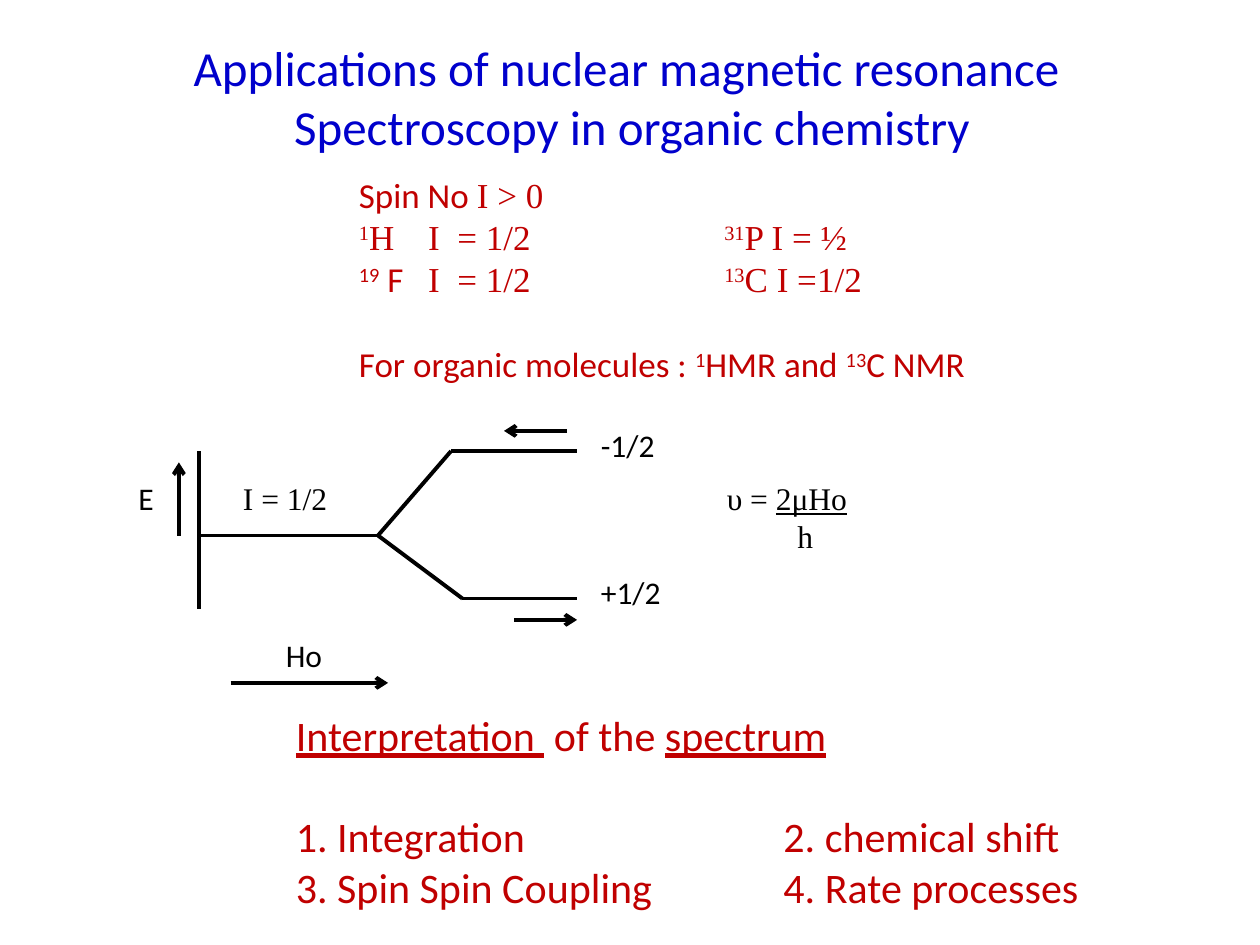
import pptx
import pptx.dml.color
import pptx.enum.shapes
import pptx.enum.text
import pptx.util
from lxml import etree
from pptx.oxml.ns import qn

Inches = pptx.util.Inches
Pt = pptx.util.Pt

BLUE, RED, BLACK = "0000CC", "C00000", "000000"
SANS, SERIF = "Calibri", "Times New Roman"


def serif(text):
    return text, {"font": SERIF}


def raised(text, font=SERIF):
    return text, {"font": font, "superscript": True}


def underlined(text, font=SANS):
    return text, {"font": font, "underline": True}


# A paragraph is a list of runs; a run is plain text or (text, format).
title = [
    ["Applications of nuclear magnetic resonance "],
    ["Spectroscopy in organic chemistry"],
]
spin_numbers = [
    ["Spin No ", serif("I > 0")],
    [raised("1"), serif("H\tI  = 1/2\t"), raised("31"), serif("P I = ½")],
    [raised("19", SANS), " F\t", serif("I  = 1/2\t"), raised("13"), serif("C I =1/2")],
    ["For organic molecules : ", raised("1", SANS), "HMR and ",
     raised("13", SANS), "C NMR"],
]
formula = [
    [serif("υ = "), underlined("2μHo", SERIF)],
    [serif("\th")],
]
interpretation = [
    [underlined("Interpretation "), " of the ", underlined("spectrum")],
    ["1. Integration\t2. chemical shift"],
    ["3. Spin Spin Coupling\t4. Rate processes"],
]

# text, left, top, width
diagram_labels = [
    ("E", 1, 3.75, 0.32),
    (serif("I = 1/2"), 1.83, 3.75, 0.88),
    ("-1/2", 4.67, 3.33, 0.63),
    ("+1/2", 4.67, 4.5, 0.68),
    ("Ho", 2.17, 5, 0.49),
]

split = (3, 4.25)
upper, lower = (3.58, 3.58), (3.67, 4.75)
level_end = 4.58
levels = [
    ((1.58, 3.58), (1.58, 4.83)),
    ((1.58, 4.25), split),
    (split, upper),
    (split, lower),
    (upper, (level_end, upper[1])),
    (lower, (level_end, lower[1])),
]
arrows = [
    ((1.42, 4.25), (1.42, 3.67)),
    ((4.5, 3.42), (4, 3.42)),
    ((4.08, 4.92), (level_end, 4.92)),
    ((1.83, 5.42), (3.08, 5.42)),
]


def rgb(value):
    return pptx.dml.color.RGBColor.from_string(value)


def add_tabs(paragraph, stops):
    tab_list = etree.SubElement(paragraph._p.get_or_add_pPr(), qn("a:tabLst"))
    for stop in stops:
        etree.SubElement(tab_list, qn("a:tab"), pos=str(Inches(stop)), algn="l")


def add_text(slide, paragraphs, box, *, size, color=BLACK, centered=False,
             wrap=True, tabs=(), gap_before=None):
    """Add a text box; gap_before is the paragraph index set off by one line."""
    frame = slide.shapes.add_textbox(*map(Inches, box)).text_frame
    frame.word_wrap = wrap
    for index, runs in enumerate(paragraphs):
        paragraph = frame.paragraphs[0] if index == 0 else frame.add_paragraph()
        if centered:
            paragraph.alignment = pptx.enum.text.PP_ALIGN.CENTER
        if index == gap_before:
            paragraph.space_before = Pt(size * 1.22)
        if tabs:
            add_tabs(paragraph, tabs)
        for item in runs:
            text, style = (item, {}) if isinstance(item, str) else item
            run = paragraph.add_run()
            run.text = text
            run.font.name = style.get("font", SANS)
            run.font.size = Pt(size)
            run.font.color.rgb = rgb(color)
            if style.get("underline"):
                run.font.underline = True
            if style.get("superscript"):
                run._r.get_or_add_rPr().set("baseline", "30000")


def add_line(slide, start, end, arrow=False):
    line = slide.shapes.add_connector(
        pptx.enum.shapes.MSO_CONNECTOR.STRAIGHT, *map(Inches, start + end))
    line.line.color.rgb = rgb(BLACK)
    line.line.width = Pt(2.25)
    if arrow:
        etree.SubElement(line.line._get_or_add_ln(), qn("a:tailEnd"), type="arrow")
    etree.SubElement(line._element.spPr, qn("a:effectLst"))


def main():
    deck = pptx.Presentation()
    deck.slide_width, deck.slide_height = Inches(10), Inches(7.5)
    slide = deck.slides.add_slide(deck.slide_layouts[6])

    add_text(slide, title, (1.09, 0.25, 7.85, 1.03), size=28, color=BLUE,
             centered=True)
    add_text(slide, spin_numbers, (2.75, 1.33, 5.09, 1.78), size=20, color=RED,
             tabs=(0.55, 2.9), gap_before=3)
    for start, end in levels:
        add_line(slide, start, end)
    for start, end in arrows:
        add_line(slide, start, end, arrow=True)
    for label, left, top, width in diagram_labels:
        add_text(slide, [[label]], (left, top, width, 0.4), size=18, wrap=False)
    add_text(slide, formula, (5.67, 3.75, 1.16, 0.71), size=18, tabs=(0.56,))
    add_text(slide, interpretation, (2.25, 5.58, 6.47, 1.72), size=24, color=RED,
             tabs=(3.87,), gap_before=1)

    deck.save("out.pptx")


if __name__ == "__main__":
    main()
